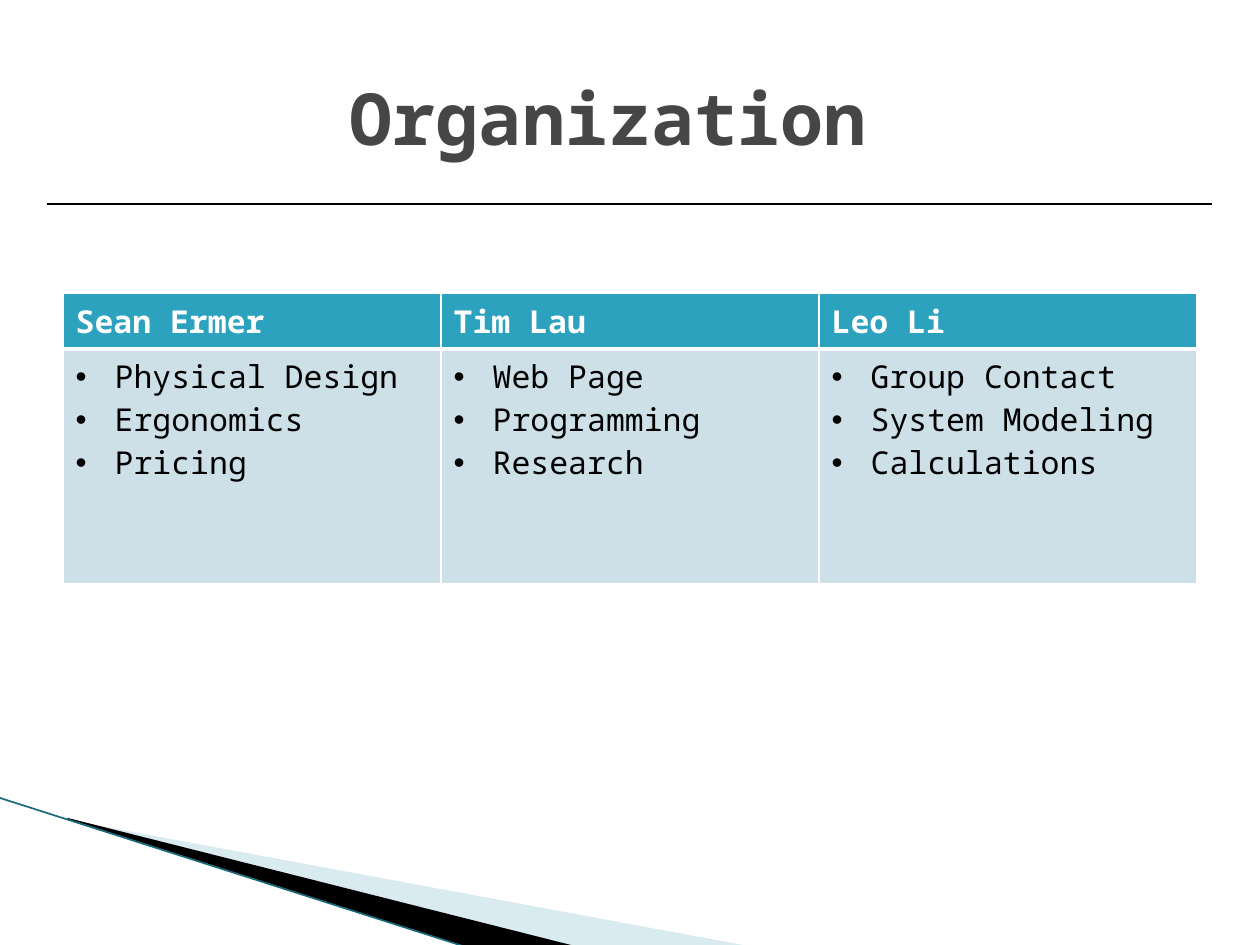
from pptx import Presentation
from pptx.dml.color import RGBColor
from pptx.enum.shapes import MSO_CONNECTOR
from pptx.enum.text import MSO_ANCHOR, PP_ALIGN
from pptx.oxml.ns import qn
from pptx.util import Inches, Pt
from lxml.etree import SubElement

FONT = "Noto Sans Mono"
WHITE = RGBColor(0xFF, 0xFF, 0xFF)
BLACK = RGBColor(0, 0, 0)
GRAY = RGBColor(0x46, 0x46, 0x46)
TEAL = RGBColor(0x2D, 0xA2, 0xBF)
DARK_TEAL = RGBColor(0x16, 0x6A, 0x7C)
PALE_BLUE = RGBColor(0xCD, 0xE0, 0xE8)
SKY_BLUE = RGBColor(0xA0, 0xCB, 0xDC)

MEMBERS = {
    "Sean Ermer": ["Physical Design", "Ergonomics", "Pricing"],
    "Tim Lau": ["Web Page", "Programming", "Research"],
    "Leo Li": ["Group Contact", "System Modeling", "Calculations"],
}


def add_wedge(slide, points, color, opacity=100):
    corners = [(Inches(x), Inches(y)) for x, y in points]
    builder = slide.shapes.build_freeform(*corners[0], scale=1.0)
    builder.add_line_segments(corners[1:], close=True)
    shape = builder.convert_to_shape()
    shape.shadow.inherit = False
    shape.line.fill.background()
    shape.fill.solid()
    shape.fill.fore_color.rgb = color
    if opacity < 100:
        color_element = shape._element.spPr.find(qn("a:solidFill"))[0]
        SubElement(color_element, qn("a:alpha"), val=str(opacity * 1000))


def add_line(slide, start, end, color, width):
    ends = [Inches(value) for value in (*start, *end)]
    line = slide.shapes.add_connector(MSO_CONNECTOR.STRAIGHT, *ends)
    line.line.color.rgb = color
    line.line.width = Pt(width)
    SubElement(line._element.spPr, qn("a:effectLst"))


def add_run(paragraph, text, size, color, bold=False):
    run = paragraph.add_run()
    run.text = text
    run.font.name = FONT
    run.font.size = Pt(size)
    run.font.bold = bold
    run.font.color.rgb = color


def add_title(slide, text):
    box = slide.shapes.add_textbox(Inches(0.5), Inches(0.3), Inches(9), Inches(1.25))
    frame = box.text_frame
    frame.word_wrap = True
    frame.vertical_anchor = MSO_ANCHOR.MIDDLE
    paragraph = frame.paragraphs[0]
    paragraph.alignment = PP_ALIGN.CENTER
    add_run(paragraph, text, 41, GRAY, bold=True)


def style_cell(cell, fill, bottom_width):
    properties = cell._tc.get_or_add_tcPr()
    for side, width in (("L", 1), ("R", 1), ("T", 1), ("B", bottom_width)):
        border = SubElement(properties, qn(f"a:ln{side}"), w=str(Pt(width)))
        SubElement(SubElement(border, qn("a:solidFill")), qn("a:srgbClr"), val=str(WHITE))
    cell.fill.solid()
    cell.fill.fore_color.rgb = fill


def add_bullet(paragraph):
    properties = paragraph._p.get_or_add_pPr()
    properties.set("marL", str(Inches(0.31)))
    properties.set("indent", str(-Inches(0.31)))
    SubElement(properties, qn("a:buFont"), typeface="Arial")
    SubElement(properties, qn("a:buChar"), char="•")


def add_member_table(slide):
    frame = slide.shapes.add_table(
        2, len(MEMBERS), Inches(0.5), Inches(2.33), Inches(9), Inches(2.3))
    table = frame.table
    table.horz_banding = False
    table.rows[0].height = Inches(0.44)
    table.rows[1].height = Inches(1.86)
    for column, (name, duties) in enumerate(MEMBERS.items()):
        header, body = table.cell(0, column), table.cell(1, column)
        style_cell(header, TEAL, 3)
        style_cell(body, PALE_BLUE, 1)
        add_run(header.text_frame.paragraphs[0], name, 18, WHITE, bold=True)
        text = body.text_frame
        for index, duty in enumerate(duties):
            paragraph = text.add_paragraph() if index else text.paragraphs[0]
            add_bullet(paragraph)
            add_run(paragraph, duty, 18, BLACK)


def main():
    presentation = Presentation()
    presentation.slide_width = Inches(10)
    presentation.slide_height = Inches(7.5)
    slide = presentation.slides.add_slide(presentation.slide_layouts[6])
    add_wedge(slide, [(0.55, 6.51), (5.95, 7.51), (4.56, 7.51), (0.55, 6.5)], SKY_BLUE, 40)
    add_wedge(slide, [(0.53, 6.49), (4.57, 7.51), (3.72, 7.52), (0.54, 6.5)], BLACK)
    add_line(slide, (-0.01, 6.33), (3.71, 7.52), DARK_TEAL, 0.95)
    add_member_table(slide)
    add_title(slide, "Organization ")
    add_line(slide, (0.37, 1.62), (9.62, 1.62), BLACK, 1)
    presentation.save("out.pptx")


if __name__ == "__main__":
    main()
